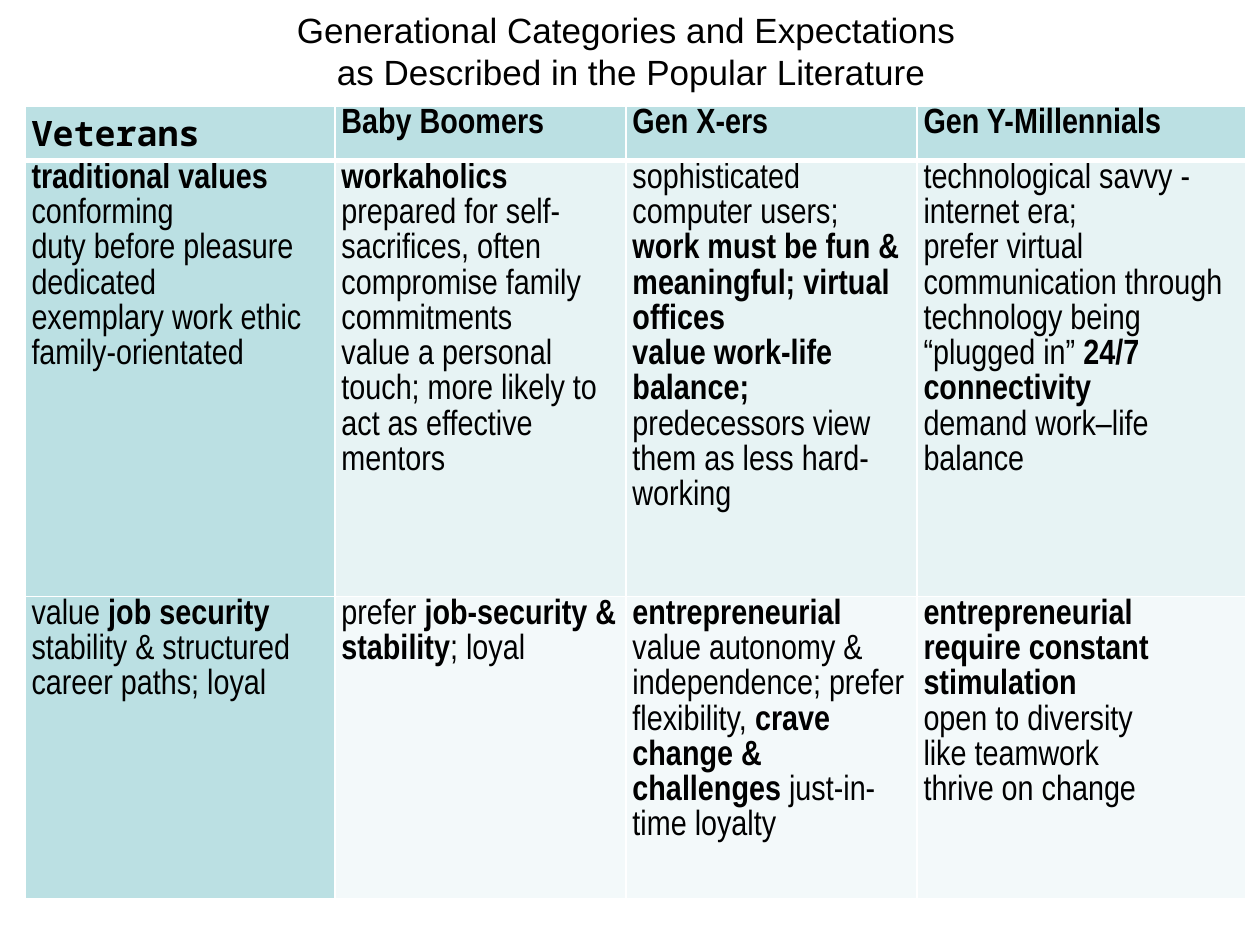
from lxml import etree
from pptx import Presentation, util as u
from pptx.dml.color import RGBColor
from pptx.enum import text
from pptx.oxml import ns

BLACK = RGBColor(0x00, 0x00, 0x00)
WHITE = RGBColor(0xFF, 0xFF, 0xFF)
TEAL = RGBColor(0xBB, 0xE0, 0xE3)
PALE_TEAL = RGBColor(0xE7, 0xF3, 0xF4)
FAINT_TEAL = RGBColor(0xF3, 0xF9, 0xFA)

TITLE = "Generational Categories and Expectations \vas Described in the Popular Literature"
COLUMN_WIDTHS = (177.12, 166.32, 166.32, 187.92)
ROW_HEIGHTS = (31.2, 249.12, 172.8)
ROW_FILLS = (TEAL, PALE_TEAL, FAINT_TEAL)
BOLD_MARK = "**"
ROWS = (
    (
        ("**Veterans**",),
        ("**Baby Boomers**",),
        ("**Gen X-ers**",),
        ("**Gen Y-Millennials**",),
    ),
    (
        ("**traditional values**", "conforming", "duty before pleasure",
         "dedicated", "exemplary work ethic", "family-orientated"),
        ("**workaholics**",
         "prepared for self-sacrifices, often compromise family commitments",
         "value a personal touch; more likely to act as effective mentors"),
        ("sophisticated computer users;",
         "**work must be fun & meaningful; virtual offices**",
         "**value work-life balance; **predecessors view them as less hard-working"),
        ("technological savvy - internet era;",
         "prefer virtual communication through technology being “plugged in” "
         "**24/7 connectivity**",
         "demand work–life balance"),
    ),
    (
        ("value **job security**", "stability & structured career paths; loyal"),
        ("prefer **job-security & stability**; loyal",),
        ("**entrepreneurial**",
         "value autonomy & independence; prefer flexibility, "
         "**crave change & challenges **just-in-time loyalty"),
        ("**entrepreneurial**", "**require constant stimulation**",
         "open to diversity", "like teamwork", "thrive on change"),
    ),
)


def set_format(target, values):
    for name, value in values.items():
        setattr(target, name, value)


def set_font(font, name, bold):
    set_format(font, {"name": name, "size": u.Pt(20), "bold": bold})
    font.color.rgb = BLACK


def add_borders(cell, widths):
    properties = cell._tc.get_or_add_tcPr()
    for side, width in widths.items():
        line = etree.SubElement(properties, ns.qn(f"a:ln{side}"), w=str(u.Pt(width)))
        fill = etree.SubElement(line, ns.qn("a:solidFill"))
        etree.SubElement(fill, ns.qn("a:srgbClr"), val=str(WHITE))


def write_cell(cell, lines, font_name):
    set_format(cell, {
        "margin_left": u.Pt(3.6), "margin_right": u.Pt(3.6),
        "margin_top": 0, "margin_bottom": 0,
        "vertical_anchor": text.MSO_ANCHOR.TOP,
    })
    for index, line in enumerate(lines):
        frame = cell.text_frame
        paragraph = frame.add_paragraph() if index else frame.paragraphs[0]
        paragraph.line_spacing = 1.07
        for part, words in enumerate(line.split(BOLD_MARK)):
            if words:
                run = paragraph.add_run()
                run.text = words
                set_font(run.font, font_name, part % 2 == 1)


def place_title(slide, left, top, width, height):
    title = slide.shapes.title
    set_format(title, {
        "left": u.Pt(left), "top": u.Pt(top),
        "width": u.Pt(width), "height": u.Pt(height),
    })
    frame = title.text_frame
    set_format(frame, {
        "text": TITLE, "word_wrap": True,
        "auto_size": text.MSO_AUTO_SIZE.NONE,
        "vertical_anchor": text.MSO_ANCHOR.MIDDLE,
        "margin_top": u.Pt(3.6), "margin_bottom": u.Pt(27.6),
    })
    paragraph = frame.paragraphs[0]
    paragraph.alignment = text.PP_ALIGN.CENTER
    for run in paragraph.runs:
        set_font(run.font, "Arial", False)


def place_generation_table(slide, left, top, width, height):
    frame = slide.shapes.add_table(
        len(ROWS), len(COLUMN_WIDTHS), u.Pt(left), u.Pt(top), u.Pt(width), u.Pt(height))
    table = frame.table
    for column, share in zip(table.columns, COLUMN_WIDTHS):
        column.width = u.Pt(width * share / sum(COLUMN_WIDTHS))
    for row, share in zip(table.rows, ROW_HEIGHTS):
        row.height = u.Pt(height * share / sum(ROW_HEIGHTS))
    for row_index, row in enumerate(ROWS):
        for column_index, lines in enumerate(row):
            cell = table.cell(row_index, column_index)
            is_corner = row_index == column_index == 0
            write_cell(cell, lines, "Noto Sans Mono" if is_corner else "Arial Narrow")
            add_borders(cell, {
                "L": 1, "R": 1,
                "T": 3 if row_index == 1 else 1,
                "B": 3 if row_index == 0 else 1,
            })
            cell.fill.solid()
            cell.fill.fore_color.rgb = ROW_FILLS[row_index] if column_index else TEAL


def main():
    presentation = Presentation()
    set_format(presentation, {"slide_width": u.Pt(720), "slide_height": u.Pt(540)})
    slide = presentation.slides.add_slide(presentation.slide_layouts[5])
    place_title(slide, 36.72, 20.88, 648, 39.6)
    place_generation_table(slide, 14.4, 60.48, sum(COLUMN_WIDTHS), sum(ROW_HEIGHTS))
    presentation.save("out.pptx")


if __name__ == "__main__":
    main()
